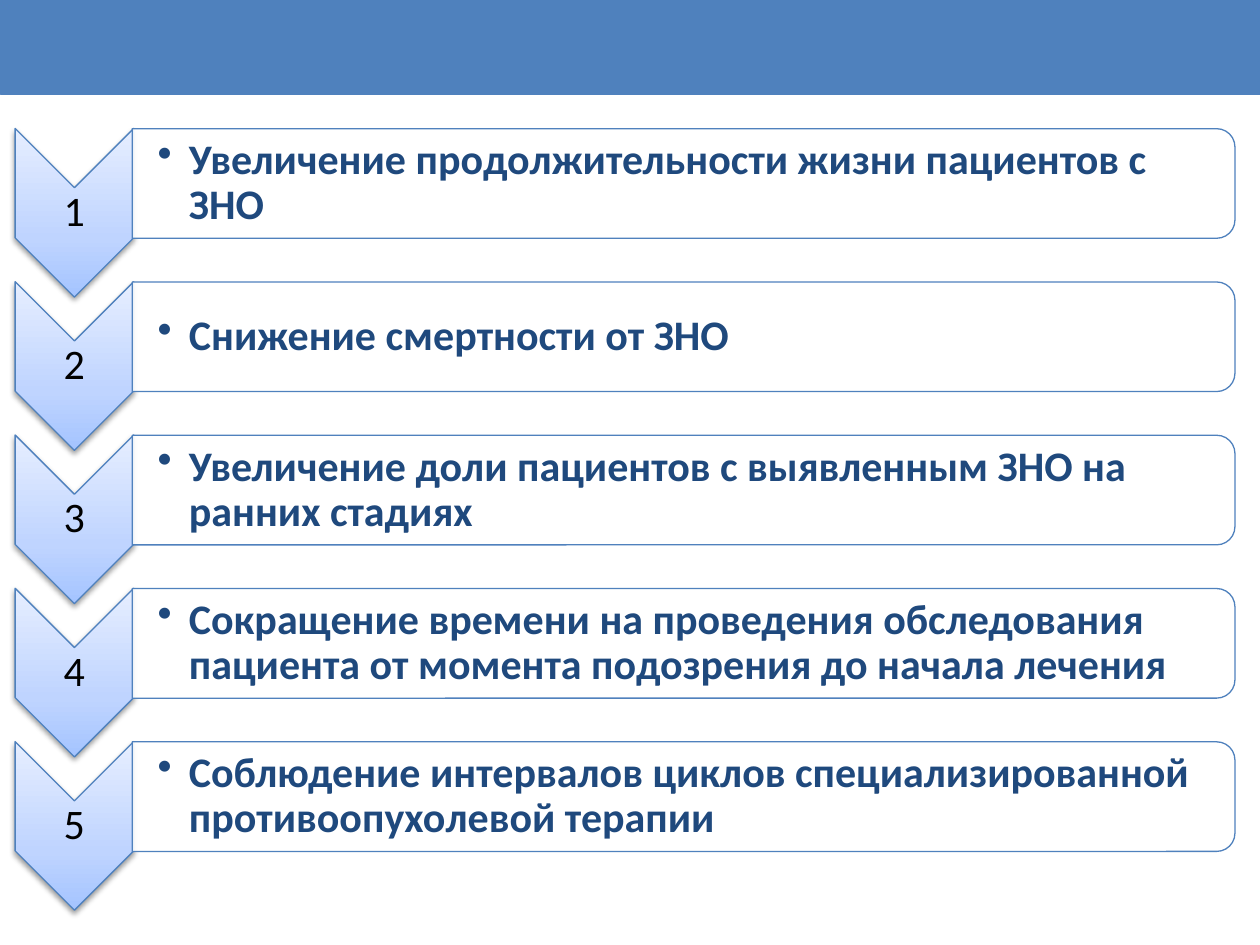
from pptx import Presentation
from pptx.dml.color import RGBColor
from pptx.enum.shapes import MSO_SHAPE
from pptx.enum.text import MSO_ANCHOR, PP_ALIGN
from pptx.oxml import parse_xml
from pptx.oxml.ns import nsdecls, qn
from pptx.util import Cm, Pt

CHEVRON = MSO_SHAPE.CHEVRON
PANEL = MSO_SHAPE.ROUND_2_SAME_RECTANGLE
RECTANGLE = MSO_SHAPE.RECTANGLE
MIDDLE = MSO_ANCHOR.MIDDLE
CENTER, LEFT = PP_ALIGN.CENTER, PP_ALIGN.LEFT

GOALS = [
    "Увеличение продолжительности жизни пациентов с ЗНО",
    "Снижение смертности от ЗНО",
    "Увеличение доли пациентов с выявленным ЗНО на ранних стадиях",
    "Сокращение времени на проведения обследования пациента от момента подозрения до начала лечения",
    "Соблюдение интервалов циклов специализированной противоопухолевой терапии",
]
COLORS = {
    "blue": "4F81BD",
    "navy": "1F497D",
    "black": "000000",
    "white": "FFFFFF",
}
CHEVRON_STOPS = [(0, "A4C4FF"), (35, "BFD4FF"), (100, "E6EEFF")]
FONT = "Calibri"

ROW_PITCH = 3.09
PANEL_CENTER = (13.78, 3.7)
PANEL_SIZE = (2.21, 22.23)
GOAL_CENTER_X = 13.75
GOAL_SIZE = (22.12, 2.01)
CHEVRON_CENTER = (1.5, 4.29)
CHEVRON_SIZE = (3.4, 2.39)
NUMBER_SIZE = (2.39, 1.02)


def centered_box(center_x, center_y, size):
    width, height = size
    return (Cm(center_x - width / 2), Cm(center_y - height / 2), Cm(width), Cm(height))


def add_outlined(slide, kind, box, fill, line_width=0.75, rotation=0):
    shape = slide.shapes.add_shape(kind, *box)
    shape.rotation = rotation
    shape.shadow.inherit = False
    shape.fill.solid()
    shape.fill.fore_color.rgb = RGBColor.from_string(COLORS[fill])
    shape.line.color.rgb = RGBColor.from_string(COLORS["blue"])
    shape.line.width = Pt(line_width)
    return shape


def style_chevron(shape):
    properties = shape.element.spPr
    stops = "".join(
        f'<a:gs pos="{position * 1000}"><a:srgbClr val="{color}"/></a:gs>'
        for position, color in CHEVRON_STOPS
    )
    gradient = parse_xml(
        f'<a:gradFill {nsdecls("a")} rotWithShape="0"><a:gsLst>{stops}</a:gsLst>'
        '<a:lin ang="16200000" scaled="0"/></a:gradFill>'
    )
    properties.replace(properties.find(qn("a:solidFill")), gradient)
    properties.find(qn("a:effectLst")).append(parse_xml(
        f'<a:outerShdw {nsdecls("a")} blurRad="40000" dist="20000" dir="5400000" '
        f'rotWithShape="0"><a:srgbClr val="{COLORS["black"]}">'
        '<a:alpha val="38000"/></a:srgbClr></a:outerShdw>'
    ))


def make_translucent(shape):
    color = shape.element.spPr.find(qn("a:solidFill"))[0]
    color.append(parse_xml(f'<a:alpha {nsdecls("a")} val="90000"/>'))


def add_label(slide, text, box, color, alignment, bold=False, left_inset=0.05):
    text_frame = slide.shapes.add_textbox(*box).text_frame
    text_frame.word_wrap = True
    text_frame.vertical_anchor = MIDDLE
    text_frame.margin_left = Cm(left_inset)
    text_frame.margin_right = text_frame.margin_top = text_frame.margin_bottom = Cm(0.05)
    text_frame.text = text
    paragraph = text_frame.paragraphs[0]
    paragraph.alignment = alignment
    paragraph.line_spacing = 0.9
    font = paragraph.runs[0].font
    font.name = FONT
    font.size = Pt(24)
    font.bold = bold
    font.color.rgb = RGBColor.from_string(COLORS[color])
    return paragraph


def add_bullet(paragraph):
    properties = paragraph._p.get_or_add_pPr()
    properties.set("marL", str(Cm(0.63)))
    properties.set("indent", str(-Cm(0.63)))
    properties.append(parse_xml(f'<a:buChar {nsdecls("a")} char="•"/>'))


def add_goal(slide, index, goal):
    offset = index * ROW_PITCH
    chevron_x, chevron_y = CHEVRON_CENTER[0], CHEVRON_CENTER[1] + offset
    panel_x, panel_y = PANEL_CENTER[0], PANEL_CENTER[1] + offset

    chevron_box = centered_box(chevron_x, chevron_y, CHEVRON_SIZE)
    style_chevron(add_outlined(slide, CHEVRON, chevron_box, "white", rotation=90))
    number_box = centered_box(chevron_x, chevron_y, NUMBER_SIZE)
    add_label(slide, str(index + 1), number_box, "black", CENTER)

    panel_box = centered_box(panel_x, panel_y, PANEL_SIZE)
    make_translucent(add_outlined(slide, PANEL, panel_box, "white", rotation=90))
    goal_box = centered_box(GOAL_CENTER_X, panel_y, GOAL_SIZE)
    add_bullet(add_label(slide, goal, goal_box, "navy", LEFT, bold=True, left_inset=0.49))


def main():
    presentation = Presentation()
    presentation.slide_width, presentation.slide_height = Cm(25.4), Cm(19.05)
    slide = presentation.slides.add_slide(presentation.slide_layouts[6])
    for index, goal in enumerate(GOALS):
        add_goal(slide, index, goal)
    header_box = (Cm(0.02), Cm(0), Cm(25.4), Cm(1.88))
    add_outlined(slide, RECTANGLE, header_box, "blue", line_width=2)
    presentation.save("out.pptx")


if __name__ == "__main__":
    main()
